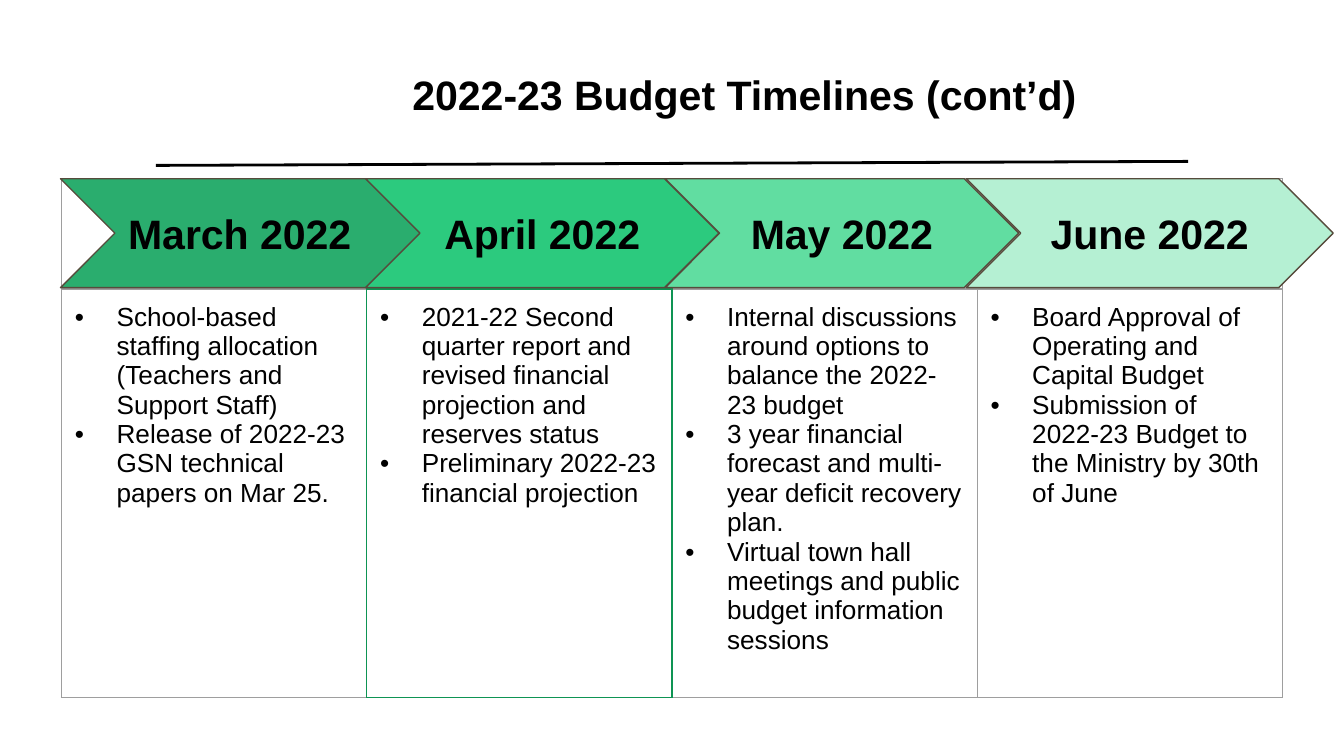
from lxml.etree import SubElement
from pptx import Presentation
from pptx.dml.color import RGBColor
from pptx.enum.shapes import MSO_CONNECTOR, MSO_SHAPE
from pptx.enum.text import MSO_ANCHOR, PP_ALIGN
from pptx.oxml.ns import qn
from pptx.util import Inches, Pt

WIDE = 10
HIGH = WIDE * 9 / 16
FONT, INK, GRAY, GREEN, BROWN = "Arial", "000000", "9E9E9E", "0E9453", "564B3C"
PAD = Inches(0.1)
HEAD, BODY = 0.82, 3.04
STEPS = [
    ("March 2022", "2AAD6E", 0, 2.68, PP_ALIGN.LEFT, [
        "School-based staffing allocation (Teachers and Support Staff)",
        "Release of 2022-23 GSN technical papers on Mar 25."]),
    ("April 2022", "2CCA7E", 2.27, 2.63, PP_ALIGN.CENTER, [
        "2021-22 Second quarter report and revised financial projection and reserves status",
        "Preliminary 2022-23 financial projection"]),
    ("May 2022", "61DDA1", 4.5, 2.63, PP_ALIGN.CENTER, [
        "Internal discussions around options to balance the 2022-23 budget",
        "3 year financial forecast and multi-year deficit recovery plan.",
        "Virtual town hall meetings and public budget information sessions"]),
    ("June 2022", "B5F0D3", 6.74, 2.73, PP_ALIGN.CENTER, [
        "Board Approval of Operating and Capital Budget",
        "Submission of 2022-23 Budget to the Ministry by 30th of June"]),
]


def paint(code):
    return RGBColor.from_string(code)


def box(left, top, width, height):
    return (Inches(WIDE * left), Inches(HIGH * top),
            Inches(WIDE * width), Inches(HIGH * height))


def write(para, text, size, bold=False):
    run = para.add_run()
    run.text = text
    font = run.font
    font.name, font.size, font.bold = FONT, Pt(size), bold
    font.color.rgb = paint(INK)


def inset(frame):
    frame.margin_left = frame.margin_right = PAD
    frame.margin_top = frame.margin_bottom = PAD


def label(frame, text, align):
    inset(frame)
    frame.word_wrap = True
    frame.vertical_anchor = MSO_ANCHOR.MIDDLE
    para = frame.paragraphs[0]
    para.alignment = align
    write(para, text, 22, True)


def bullet(para, text):
    props = para._p.get_or_add_pPr()
    props.set("marL", str(Inches(0.31)))
    props.set("indent", str(Inches(-0.31)))
    tint = SubElement(props, qn("a:buClr"))
    SubElement(tint, qn("a:srgbClr"), val=INK)
    SubElement(props, qn("a:buFont"), typeface=FONT)
    SubElement(props, qn("a:buChar"), char="•")
    write(para, text, 14)


def border(cell, row, col):
    green = {(0, 1): "B", (1, 0): "R", (1, 1): "LRTB", (1, 2): "L"}.get((row, col), "")
    props = cell._tc.get_or_add_tcPr()
    for side in "LRTB":
        edge = SubElement(props, qn(f"a:ln{side}"), w=str(Pt(0.75)))
        fill = SubElement(edge, qn("a:solidFill"))
        SubElement(fill, qn("a:srgbClr"), val=GREEN if side in green else GRAY)
    cell.fill.background()


def title(slide, area):
    shape = slide.shapes.title
    shape.left, shape.top, shape.width, shape.height = area
    label(shape.text_frame, "2022-23 Budget Timelines (cont’d)", PP_ALIGN.CENTER)


def rule(slide, area):
    left, top, width, height = area
    line = slide.shapes.add_connector(
        MSO_CONNECTOR.STRAIGHT, left, top + height, left + width, top)
    line.line.color.rgb = paint(INK)
    line.line.width = Pt(1.5)
    SubElement(line._element.spPr, qn("a:effectLst"))


def grid(slide, area):
    table = slide.shapes.add_table(2, len(STEPS), *area).table
    table.first_row = table.horz_banding = False
    for row, size in zip(table.rows, (HEAD, BODY)):
        row.height = Inches(size)
    for col, step in enumerate(STEPS):
        table.columns[col].width = int(area[2] / len(STEPS))
        for row in range(2):
            cell = table.cell(row, col)
            inset(cell)
            border(cell, row, col)
        frame = table.cell(1, col).text_frame
        for num, text in enumerate(step[-1]):
            bullet(frame.add_paragraph() if num else frame.paragraphs[0], text)


def arrows(slide, area):
    left, top, _, height = area
    for name, color, start, width, align, _ in STEPS:
        shape = slide.shapes.add_shape(
            MSO_SHAPE.CHEVRON, left + Inches(start), top, Inches(width), height)
        shape.shadow.inherit = False
        shape.adjustments[0] = 0.5
        shape.fill.solid()
        shape.fill.fore_color.rgb = paint(color)
        shape.line.color.rgb = paint(BROWN)
        shape.line.width = Pt(0.75)
        label(shape.text_frame, name, align)


def main():
    deck = Presentation()
    deck.slide_width, deck.slide_height = Inches(WIDE), Inches(HIGH)
    slide = deck.slides.add_slide(deck.slide_layouts[5])
    title(slide, box(0.162, 0.03, 0.784, 0.188))
    rule(slide, box(0.116, 0.2135, 0.768, 0.0053))
    grid(slide, box(0.0458, 0.2364, 0.9085, 0.686))
    arrows(slide, box(0.045, 0.2364, 0.947, 0.144))
    deck.save("out.pptx")


if __name__ == "__main__":
    main()
